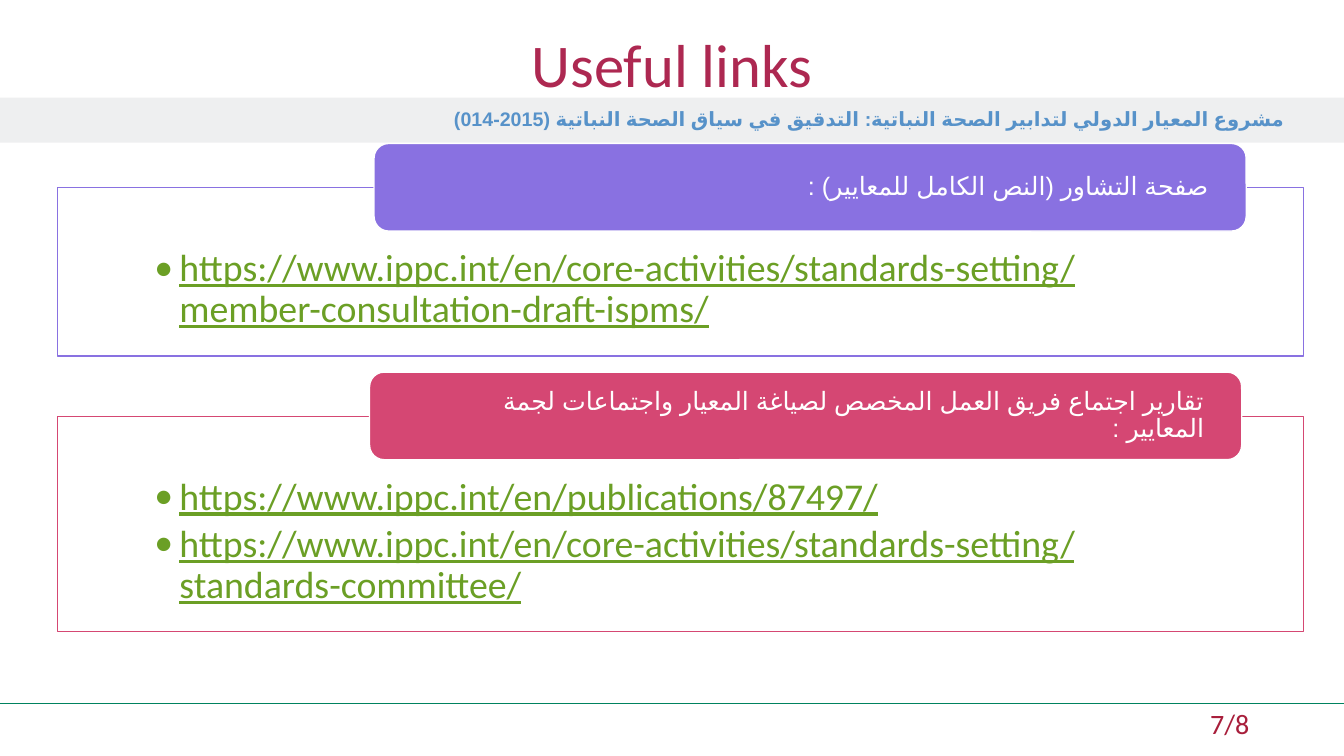
"""Build the slide of useful links on the draft audit standard."""
from lxml import etree
from pptx import Presentation
from pptx.dml.color import RGBColor
from pptx.enum.shapes import MSO_CONNECTOR, MSO_SHAPE
from pptx.enum.text import MSO_ANCHOR, MSO_AUTO_SIZE, PP_ALIGN
from pptx.oxml.ns import qn
from pptx.util import Pt

RECT, ROUND = MSO_SHAPE.RECTANGLE, MSO_SHAPE.ROUNDED_RECTANGLE
LINE = MSO_CONNECTOR.STRAIGHT
TOP, MIDDLE = MSO_ANCHOR.TOP, MSO_ANCHOR.MIDDLE
LEFT, CENTER, RIGHT = PP_ALIGN.LEFT, PP_ALIGN.CENTER, PP_ALIGN.RIGHT
NO_FIT = MSO_AUTO_SIZE.NONE


class Theme:
    font, script = "Calibri", "Arial"
    title, link, page, tab, band = 43.3, 27, 20, 18, 14
    white = RGBColor.from_string("FFFFFF")
    wine = RGBColor.from_string("AD2851")
    red = RGBColor.from_string("A81E3B")
    blue = RGBColor.from_string("5792C9")
    grey = RGBColor.from_string("D8D9DC")
    green = RGBColor.from_string("6B9F25")
    rule = RGBColor.from_string("00825F")
    purple = RGBColor.from_string("8971E1")
    pink = RGBColor.from_string("D54773")


def add_box(kind, place, fill, edge=None):
    box = slide.shapes.add_shape(kind, *map(Pt, place))
    box.shadow.inherit = False
    box.fill.solid()
    box.fill.fore_color.rgb = fill
    if edge is None:
        box.line.fill.background()
    else:
        box.line.color.rgb = edge
        box.line.width = Pt(1)
    return box


def write(box, lines, size, color, align, pads, anchor=MIDDLE, bold=False,
          rtl=False, links=False):
    frame = box.text_frame
    frame.word_wrap = True
    frame.auto_size = NO_FIT
    frame.vertical_anchor = anchor
    (frame.margin_left, frame.margin_top,
     frame.margin_right, frame.margin_bottom) = map(Pt, pads)
    for i, line in enumerate(lines):
        para = frame.add_paragraph() if i else frame.paragraphs[0]
        para.alignment = align
        props = para._p.get_or_add_pPr()
        if links:
            props.set("marL", str(Pt(18)))
            props.set("indent", str(Pt(-18)))
            etree.SubElement(props, qn("a:buFont")).set("typeface", Theme.font)
            etree.SubElement(props, qn("a:buChar")).set("char", "•")
            para.space_after = Pt(4.5)
        if links or rtl:
            para.line_spacing = 0.9
        run = para.add_run()
        run.text = line
        run.font.name = Theme.font
        run.font.size = Pt(size)
        run.font.color.rgb = color
        run.font.bold = bold
        run.font.underline = links
        if rtl:
            props.set("rtl", "1")
            marks = run._r.get_or_add_rPr()
            marks.set("lang", "ar-SA")
            etree.SubElement(marks, qn("a:cs")).set("typeface", Theme.script)


deck = Presentation()
deck.slide_width, deck.slide_height = Pt(960), Pt(540)
slide = deck.slides.add_slide(deck.slide_layouts[5])

rule = slide.shapes.add_connector(LINE, Pt(0), Pt(502.5), Pt(960), Pt(502.5))
rule.line.color.rgb = Theme.rule
rule.line.width = Pt(1)
etree.SubElement(rule._element.spPr, qn("a:effectLst"))

band = add_box(RECT, (0, 69.8, 960, 32.2), Theme.grey)
tint = band.fill._xPr.find(".//" + qn("a:srgbClr"))
etree.SubElement(tint, qn("a:alpha")).set("val", "42000")
write(band, ["مشروع المعيار الدولي لتدابير الصحة النباتية: التدقيق في سياق الصحة النباتية (2015-014)"],
      Theme.band, Theme.blue, RIGHT, (42.5, 3.6, 42.5, 3.6), bold=True, rtl=True)

page = slide.shapes.add_textbox(Pt(822), Pt(505), Pt(138), Pt(28))
write(page, ["7/8"], Theme.page, Theme.red, LEFT, (42.5, 0, 28, 3.6), TOP)

base = "https://www.ippc.int/en/"
cards = [
    (134, 120.3, 267.2, Theme.purple, "صفحة التشاور (النص الكامل للمعايير) :",
     ["core-activities/standards-setting/member-consultation-draft-ispms/"]),
    (297.3, 154, 264, Theme.pink,
     "تقارير اجتماع فريق العمل المخصص لصياغة المعيار واجتماعات لجمة المعايير :",
     ["publications/87497/",
      "core-activities/standards-setting/standards-committee/"]),
]
for top, height, left, color, label, ends in cards:
    card = add_box(RECT, (41, top, 890, height), Theme.white, color)
    write(card, [base + end for end in ends], Theme.link, Theme.green, LEFT,
          (69.2, 44, 69.2, 15), TOP, links=True)
    tab = add_box(ROUND, (left, top - 31.5, 623, 62.6), color, Theme.white)
    write(tab, [label], Theme.tab, Theme.white, RIGHT, (23.7, 0, 23.7, 0),
          rtl=True)

title = slide.shapes.title
title.left, title.top, title.width, title.height = map(Pt, (0, 0, 960, 90))
write(title, ["Useful links"], Theme.title, Theme.wine, CENTER,
      (7.2, 3.6, 7.2, 3.6))

deck.save("out.pptx")
